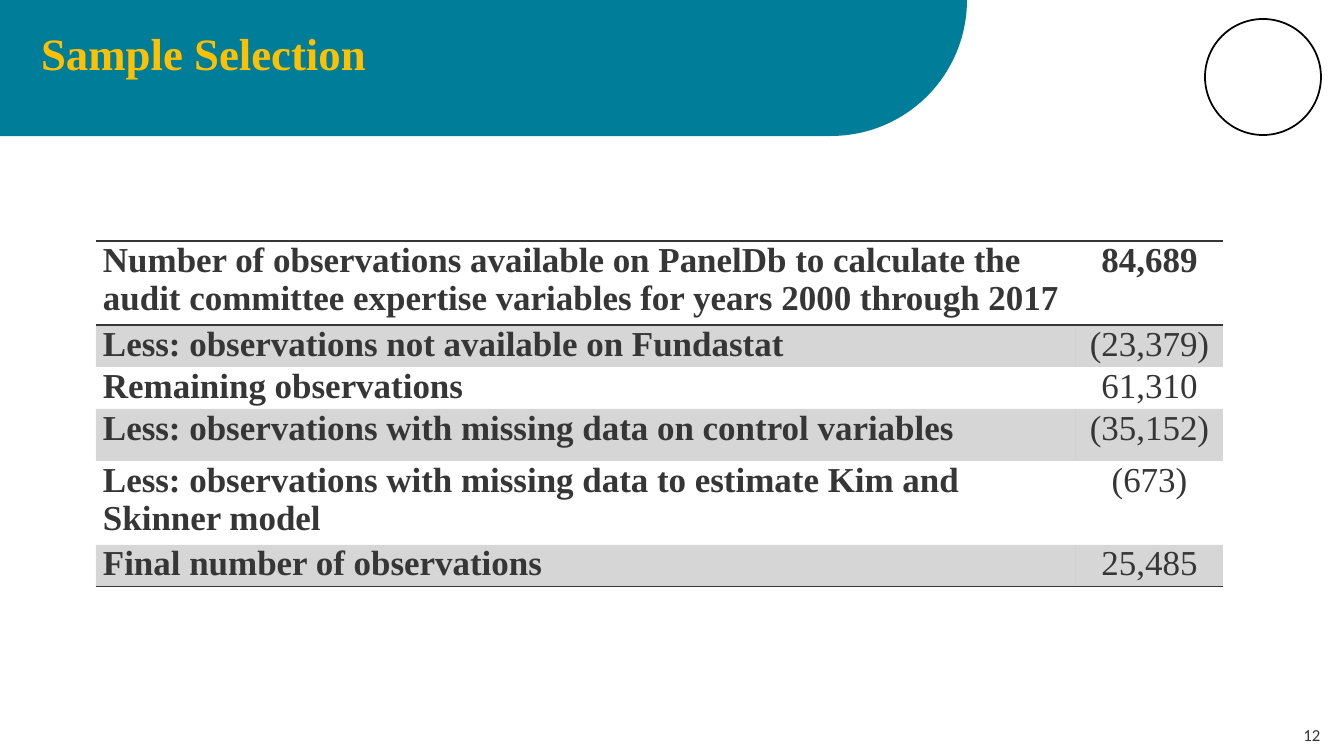
import math

import pptx
import pptx.dml.color
import pptx.enum.shapes
import pptx.enum.text
import pptx.oxml
import pptx.oxml.ns
import pptx.util

EMU_PER_PX = 914400 / 100.8
SERIF = "Times New Roman"
COLORS = {
    "band": "007D98",
    "title": "FFC000",
    "text": "373636",
    "ring": "000000",
}
OBSERVATIONS = [
    ("Number of observations available on PanelDb to calculate the audit "
     "committee expertise variables for years 2000 through 2017", "84,689"),
    ("Less: observations not available on Fundastat", "(23,379)"),
    ("Remaining observations", "61,310"),
    ("Less: observations with missing data on control variables", "(35,152)"),
    ("Less: observations with missing data to estimate Kim and Skinner model",
     "(673)"),
    ("Final number of observations", "25,485"),
]
ROW_HEIGHTS = [84, 42, 42, 52, 84, 42]
LABEL_SHARE = 0.87
NO_GRID_STYLE = "{2D5ABB26-0587-4C30-8999-92F81FD0307C}"


def px(length):
    return pptx.util.Emu(round(length * EMU_PER_PX))


def color(name):
    return pptx.dml.color.RGBColor.from_string(COLORS[name])


def format_text(text_frame, size, font_name, color_name, bold=False,
                align=pptx.enum.text.PP_ALIGN.LEFT):
    for paragraph in text_frame.paragraphs:
        paragraph.alignment = align
        for run in paragraph.runs:
            run.font.size = pptx.util.Pt(size)
            run.font.name = font_name
            run.font.bold = bold
            run.font.color.rgb = color(color_name)


def add_band(slide, left, top, width, height):
    """Draw the header band, rounded at its lower right, behind the title."""
    radius = height
    center = left + width - radius
    arc = []
    for degrees in range(0, 91, 2):
        angle = math.radians(degrees)
        arc.append((px(center + radius * math.cos(angle)),
                    px(top + radius * math.sin(angle))))
    builder = slide.shapes.build_freeform(px(left), px(top), scale=1.0)
    builder.add_line_segments(arc + [(px(left), px(top + height))], close=True)
    band = builder.convert_to_shape()
    band.shadow.inherit = False
    band.fill.solid()
    band.fill.fore_color.rgb = color("band")
    band.line.fill.background()
    slide.shapes.title._element.addprevious(band._element)


def add_ring(slide, left, top, size):
    ring = slide.shapes.add_shape(pptx.enum.shapes.MSO_SHAPE.OVAL,
                                  px(left), px(top), px(size), px(size))
    ring.shadow.inherit = False
    ring.fill.background()
    ring.line.color.rgb = color("ring")
    ring.line.width = pptx.util.Pt(1.25)


def place_title(slide, left, top, width, height):
    title = slide.shapes.title
    title.left, title.top = px(left), px(top)
    title.width, title.height = px(width), px(height)
    text_frame = title.text_frame
    text_frame.text = "Sample Selection"
    text_frame.auto_size = pptx.enum.text.MSO_AUTO_SIZE.NONE
    text_frame.vertical_anchor = pptx.enum.text.MSO_ANCHOR.TOP
    text_frame.paragraphs[0].line_spacing = 0.9
    format_text(text_frame, 32, SERIF, "title", bold=True)


def shade_cell(cell):
    cell.fill.solid()
    cell.fill.fore_color.rgb = color("text")
    fill_color = cell._tc.tcPr.find(".//" + pptx.oxml.ns.qn("a:srgbClr"))
    fill_color.append(pptx.oxml.parse_xml(
        f'<a:alpha {pptx.oxml.ns.nsdecls("a")} val="20000"/>'))


def add_borders(cell, sides):
    """Rule the given sides, listed top before bottom, ahead of the fill."""
    for index, side in enumerate(sides):
        cell._tc.tcPr.insert(index, pptx.oxml.parse_xml(
            f'<a:ln{side} {pptx.oxml.ns.nsdecls("a")} w="12700"><a:solidFill>'
            f'<a:srgbClr val="{COLORS["text"]}"/></a:solidFill></a:ln{side}>'))


def add_observation_table(slide, left, top, width):
    frame = slide.shapes.add_table(len(OBSERVATIONS), 2, px(left), px(top),
                                   px(width), px(sum(ROW_HEIGHTS)))
    table = frame.table
    table.first_row = table.horz_banding = False
    table._tbl.tblPr.find(pptx.oxml.ns.qn("a:tableStyleId")).text = NO_GRID_STYLE
    label_width = round(width * LABEL_SHARE)
    table.columns[0].width = px(label_width)
    table.columns[1].width = px(width - label_width)
    borders = {0: "TB", len(OBSERVATIONS) - 1: "B"}
    alignments = [pptx.enum.text.PP_ALIGN.LEFT, pptx.enum.text.PP_ALIGN.CENTER]

    for row, values in enumerate(OBSERVATIONS):
        table.rows[row].height = px(ROW_HEIGHTS[row])
        for column, value in enumerate(values):
            cell = table.cell(row, column)
            cell.margin_left = cell.margin_right = px(7)
            cell.margin_top = cell.margin_bottom = 0
            cell.text_frame.text = value
            format_text(cell.text_frame, 25, SERIF, "text",
                        bold=row == 0 or column == 0, align=alignments[column])
            if row % 2:
                shade_cell(cell)
            else:
                cell.fill.background()
            add_borders(cell, borders.get(row, ""))


def add_page_number(slide, left, top, width, height):
    box = slide.shapes.add_textbox(px(left), px(top), px(width), px(height))
    text_frame = box.text_frame
    text_frame.word_wrap = True
    text_frame.vertical_anchor = pptx.enum.text.MSO_ANCHOR.MIDDLE
    text_frame.text = "12"
    format_text(text_frame, 12, "Calibri", "text",
                align=pptx.enum.text.PP_ALIGN.CENTER)


def main():
    presentation = pptx.Presentation()
    presentation.slide_width = px(1344)
    presentation.slide_height = px(756)
    slide = presentation.slides.add_slide(presentation.slide_layouts[5])
    add_band(slide, 0, 0, 967, 136)
    place_title(slide, 31, 27, 1159, 93)
    add_ring(slide, 1205, 19, 116)
    add_observation_table(slide, 96, 241, 1127)
    add_page_number(slide, 1280, 721, 64, 27)
    presentation.save("out.pptx")


if __name__ == "__main__":
    main()
